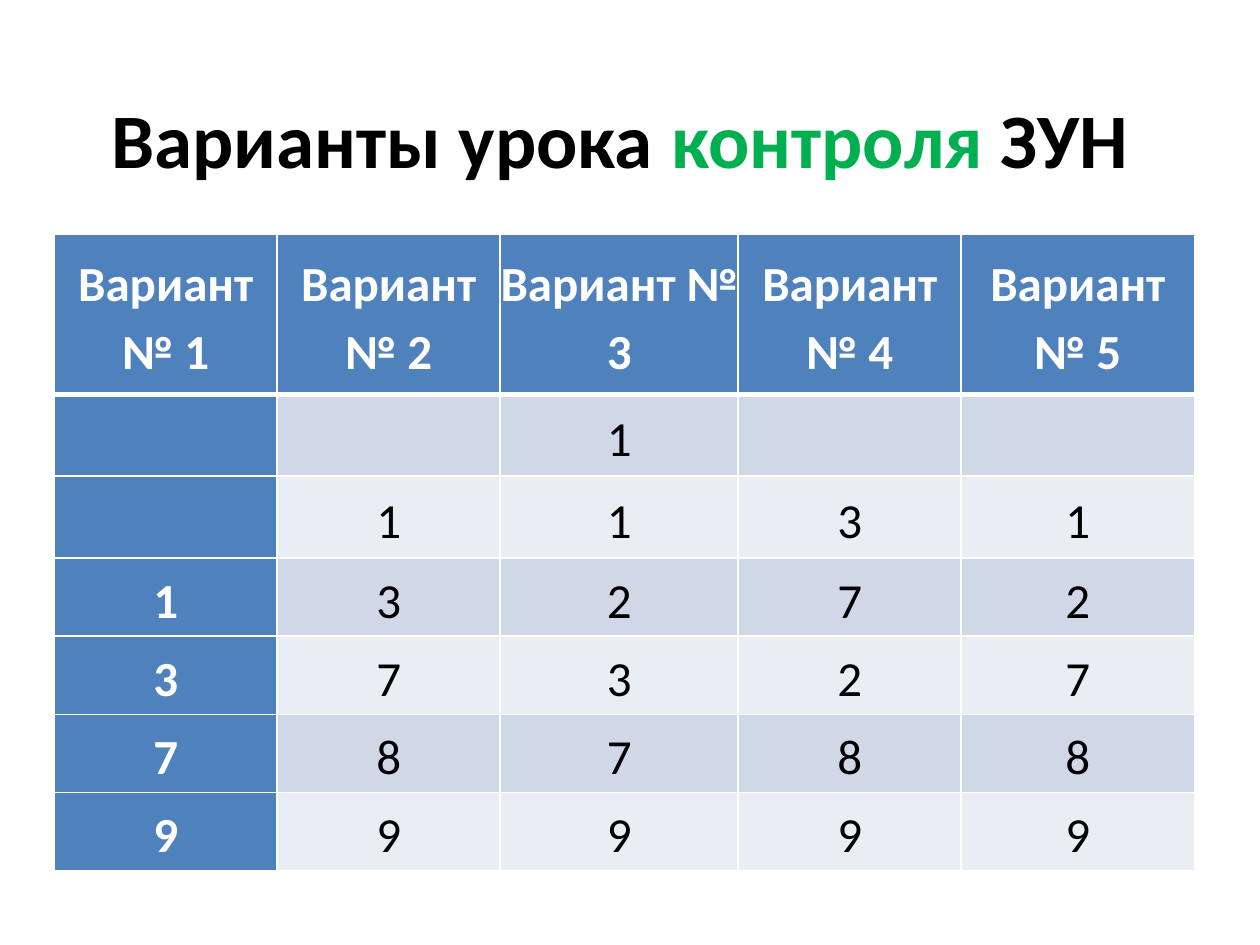
from lxml import etree
from pptx import Presentation
from pptx.dml.color import RGBColor
from pptx.enum import text
from pptx.oxml import ns
from pptx.util import Inches, Pt

FONT = "Calibri"
BLACK = RGBColor(0x00, 0x00, 0x00)
WHITE = RGBColor(0xFF, 0xFF, 0xFF)
GREEN = RGBColor(0x00, 0xB0, 0x50)
BLUE = RGBColor(0x4F, 0x81, 0xBD)
BANDS = (RGBColor(0xD0, 0xD8, 0xE8), RGBColor(0xE9, 0xED, 0xF4))

TITLE = (("Варианты урока ", BLACK), ("контроля ", GREEN), ("ЗУН", BLACK))
COLUMN_WIDTHS = (1.77, 1.77, 1.89, 1.77, 1.85)
ROW_HEIGHTS = (1.27, 0.65, 0.65, 0.62, 0.62, 0.62, 0.62)
VARIANTS = (
    [f"Вариант № {number}" for number in range(1, 6)],
    ["", "", "1", "", ""],
    ["", "1", "1", "3", "1"],
    ["1", "3", "2", "7", "2"],
    ["3", "7", "3", "2", "7"],
    ["7", "8", "7", "8", "8"],
    ["9", "9", "9", "9", "9"],
)


def add_span(para, words, size, color, bold):
    """Add one formatted run to a paragraph."""
    span = para.add_run()
    span.text = words
    span.font.name = FONT
    span.font.size = Pt(size)
    span.font.bold = bold
    span.font.color.rgb = color


def add_title(page, left, top, width, height):
    """Place the slide title in the given box."""
    box = page.shapes.add_textbox(Inches(left), Inches(top), Inches(width), Inches(height))
    frame = box.text_frame
    frame.word_wrap = True
    frame.vertical_anchor = text.MSO_ANCHOR.TOP
    para = frame.paragraphs[0]
    para.alignment = text.PP_ALIGN.CENTER
    for words, color in TITLE:
        add_span(para, words, 44, color, True)


def set_borders(cell, bottom_width):
    """Draw white borders around a cell."""
    properties = cell._tc.get_or_add_tcPr()
    for side, width in (("L", 1), ("R", 1), ("T", 1), ("B", bottom_width)):
        line = etree.SubElement(properties, ns.qn(f"a:ln{side}"), w=str(Pt(width)))
        fill = etree.SubElement(line, ns.qn("a:solidFill"))
        etree.SubElement(fill, ns.qn("a:srgbClr"), val=str(WHITE))


def fill_cell(cell, words, row, column):
    """Style a cell by its position and write its text."""
    heading = row == 0 or column == 0
    set_borders(cell, 3 if row == 0 else 1)
    cell.fill.solid()
    cell.fill.fore_color.rgb = BLUE if heading else BANDS[(row - 1) % 2]
    cell.margin_left = cell.margin_right = cell.margin_top = cell.margin_bottom = 0
    cell.vertical_anchor = text.MSO_ANCHOR.MIDDLE
    if words:
        para = cell.text_frame.paragraphs[0]
        para.alignment = text.PP_ALIGN.CENTER
        para.line_spacing = 1.15
        add_span(para, words, 28, WHITE if heading else BLACK, heading)


def add_variants(page, left, top):
    """Place the table of lesson variants at the given corner."""
    frame = page.shapes.add_table(
        len(ROW_HEIGHTS), len(COLUMN_WIDTHS), Inches(left), Inches(top),
        Inches(sum(COLUMN_WIDTHS)), Inches(sum(ROW_HEIGHTS)))
    table = frame.table
    table.first_col = True
    for column, width in zip(table.columns, COLUMN_WIDTHS):
        column.width = Inches(width)
    for row, height in zip(table.rows, ROW_HEIGHTS):
        row.height = Inches(height)
    for row, values in enumerate(VARIANTS):
        for column, words in enumerate(values):
            fill_cell(table.cell(row, column), words, row, column)


def main():
    """Build the slide and save the deck."""
    deck = Presentation()
    deck.slide_width = Inches(10)
    deck.slide_height = Inches(7.5)
    page = deck.slides.add_slide(deck.slide_layouts[6])
    add_title(page, 0.67, 0.68, 8.5, 1.61)
    add_variants(page, 0.43, 1.86)
    deck.save("out.pptx")


if __name__ == "__main__":
    main()
